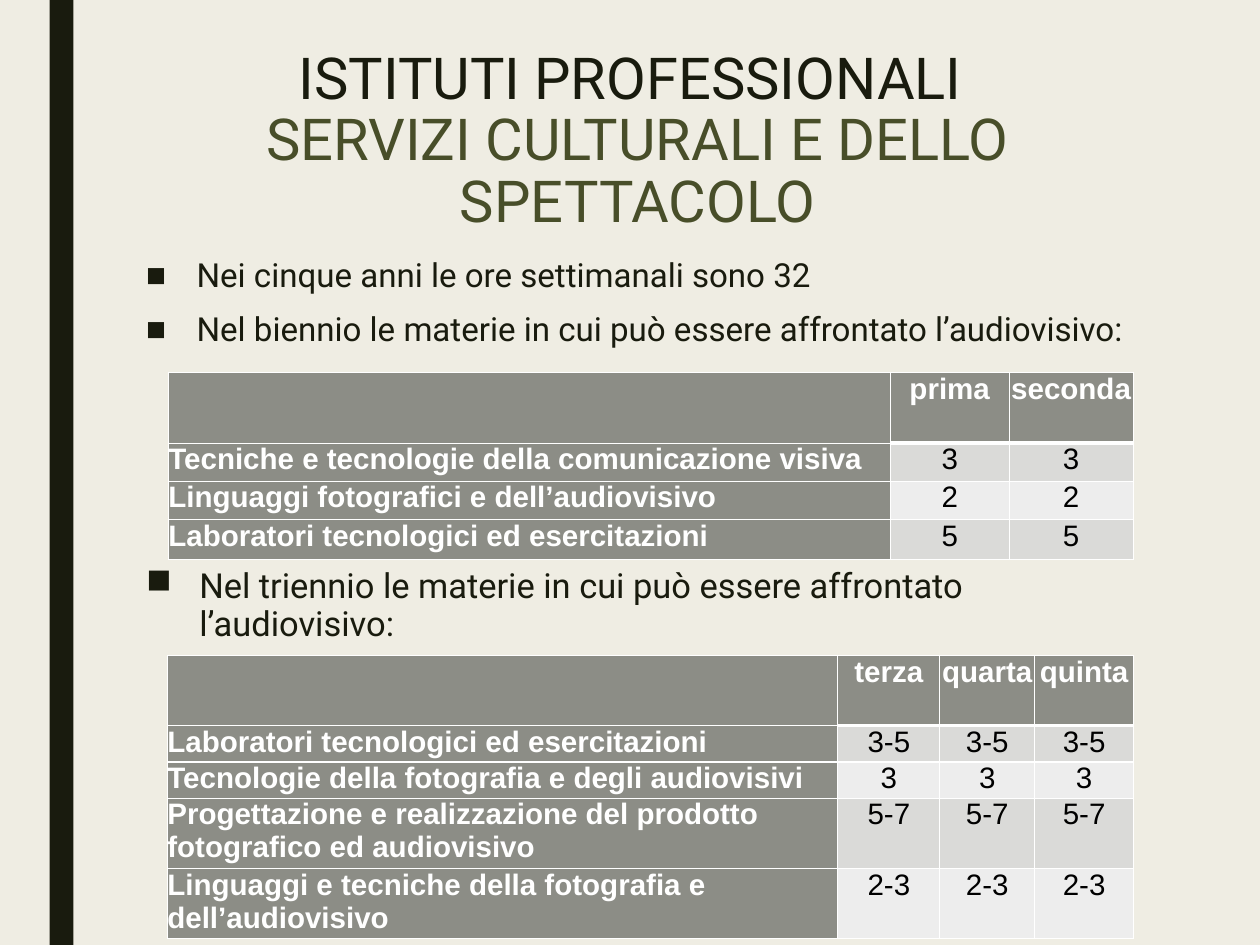
from lxml.etree import SubElement
from pptx import Presentation
from pptx.dml.color import RGBColor
from pptx.enum.shapes import MSO_SHAPE as SHAPE
from pptx.enum.text import MSO_ANCHOR as ANCHOR, MSO_AUTO_SIZE as AUTO, PP_ALIGN as ALIGN
from pptx.oxml.ns import qn
from pptx.util import Pt

CREAM = RGBColor(0xEF, 0xED, 0xE3)
DARK = RGBColor(0x19, 0x1B, 0x0E)
OLIVE = RGBColor(0x48, 0x4E, 0x29)
GREY = RGBColor(0x8C, 0x8D, 0x86)
BANDS = RGBColor(0xDA, 0xDA, 0xD8), RGBColor(0xED, 0xED, 0xED)
WHITE = RGBColor(255, 255, 255)
BLACK = RGBColor(0, 0, 0)

TITLE = [("ISTITUTI PROFESSIONALI ", DARK), ("SERVIZI CULTURALI E DELLO SPETTACOLO", OLIVE)]
BIENNIO_POINTS = [
    "Nei cinque anni le ore settimanali sono 32",
    "Nel biennio le materie in cui può essere affrontato l’audiovisivo:",
]
TRIENNIO_POINTS = ["Nel triennio le materie in cui può essere affrontato l’audiovisivo:"]
BIENNIO = dict(
    left=136.8, top=303.1, cols=[586.8, 96.5, 100.8], heights=[57, 31, 31, 32.4],
    rows=[
        ["", "prima", "seconda"],
        ["Tecniche e tecnologie della comunicazione visiva", "3", "3"],
        ["Linguaggi fotografici e dell’audiovisivo", "2", "2"],
        ["Laboratori tecnologici ed esercitazioni", "5", "5"],
    ])
TRIENNIO = dict(
    left=136, top=532.8, cols=[545, 82.8, 77, 80.6], heights=[57, 29.5, 29.5, 57, 57],
    rows=[
        ["", "terza", "quarta", "quinta"],
        ["Laboratori tecnologici ed esercitazioni", "3-5", "3-5", "3-5"],
        ["Tecnologie della fotografia e degli audiovisivi", "3", "3", "3"],
        ["Progettazione e realizzazione del prodotto fotografico ed audiovisivo",
         "5-7", "5-7", "5-7"],
        ["Linguaggi e tecniche della fotografia e dell’audiovisivo", "2-3", "2-3", "2-3"],
    ])
LEFT, WIDTH, INSET = 115.2, 806.4, 3.6
MARGINS = "margin_left", "margin_top", "margin_right", "margin_bottom"


def apply(obj, **values):
    for name, value in values.items():
        setattr(obj, name, value)


def add_run(p, text, color, **font):
    r = p.add_run()
    r.text = text
    apply(r.font, **font)
    r.font.color.rgb = color


def prepare(shape, top, height):
    apply(shape, left=Pt(LEFT), top=Pt(top), width=Pt(WIDTH), height=Pt(height))
    tf = shape.text_frame
    apply(tf, word_wrap=True, auto_size=AUTO.NONE, vertical_anchor=ANCHOR.TOP,
          **dict.fromkeys(MARGINS, Pt(INSET)))
    return tf


def paragraphs(tf, items):
    for i, item in enumerate(items):
        yield i, tf.paragraphs[0] if i == 0 else tf.add_paragraph(), item


def fill_bullets(tf, points, size, indent):
    for i, p, text in paragraphs(tf, points):
        apply(p, line_spacing=0.94, space_before=Pt(13 if i else 0), alignment=ALIGN.LEFT)
        add_run(p, text, DARK, name="Roboto", size=Pt(size))
        pPr = p._p.get_or_add_pPr()
        pPr.set("marL", str(Pt(indent)))
        pPr.set("indent", str(Pt(-indent)))
        color = SubElement(pPr, qn("a:buClr"))
        SubElement(color, qn("a:srgbClr"), val=str(DARK))
        SubElement(pPr, qn("a:buChar"), char="■")


def add_border(cell, side, width):
    ln = SubElement(cell._tc.get_or_add_tcPr(), qn("a:ln" + side), w=str(Pt(width)))
    SubElement(SubElement(ln, qn("a:solidFill")), qn("a:srgbClr"), val=str(WHITE))


def add_hours_table(s, left, top, cols, heights, rows):
    table = s.shapes.add_table(len(rows), len(cols), Pt(left), Pt(top),
                               Pt(sum(cols)), Pt(sum(heights))).table
    for column, width in zip(table.columns, cols):
        column.width = Pt(width)
    for y, (row, height) in enumerate(zip(rows, heights)):
        table.rows[y].height = Pt(height)
        for x, text in enumerate(row):
            cell = table.cell(y, x)
            heading = x == 0 or y == 0
            apply(cell, vertical_anchor=ANCHOR.TOP, **dict.fromkeys(MARGINS, 0))
            for side in "LRTB":
                thick = x > 0 and (y, side) in [(0, "B"), (1, "T")]
                add_border(cell, side, 3 if thick else 1)
            cell.fill.solid()
            cell.fill.fore_color.rgb = GREY if heading else BANDS[(y - 1) % 2]
            if text:
                p = cell.text_frame.paragraphs[0]
                p.alignment = ALIGN.CENTER if x else ALIGN.LEFT
                add_run(p, text, WHITE if heading else BLACK,
                        name="Arial", size=Pt(24), bold=heading)


def main():
    prs = Presentation()
    apply(prs, slide_width=Pt(1024), slide_height=Pt(768))
    s = prs.slides.add_slide(prs.slide_layouts[1])
    s.background.fill.solid()
    s.background.fill.fore_color.rgb = CREAM

    bar = s.shapes.add_shape(SHAPE.RECTANGLE, Pt(40.3), 0, Pt(19.4), prs.slide_height)
    bar.shadow.inherit = False
    bar.fill.solid()
    bar.fill.fore_color.rgb = DARK
    bar.line.fill.background()

    tf = prepare(s.shapes.title, 36.7, 166.3)
    for _, p, (text, color) in paragraphs(tf, TITLE):
        apply(p, alignment=ALIGN.CENTER, line_spacing=0.89, space_before=Pt(0))
        add_run(p, text, color, name="Roboto", size=Pt(47))

    fill_bullets(prepare(s.placeholders[1], 206, 94.3), BIENNIO_POINTS, 26.9, 41)
    add_hours_table(s, **BIENNIO)
    box = s.shapes.add_textbox(0, 0, 0, 0)
    fill_bullets(prepare(box, 457.2, 73.4), TRIENNIO_POINTS, 28, 43.2)
    add_hours_table(s, **TRIENNIO)
    prs.save("out.pptx")


if __name__ == "__main__":
    main()
